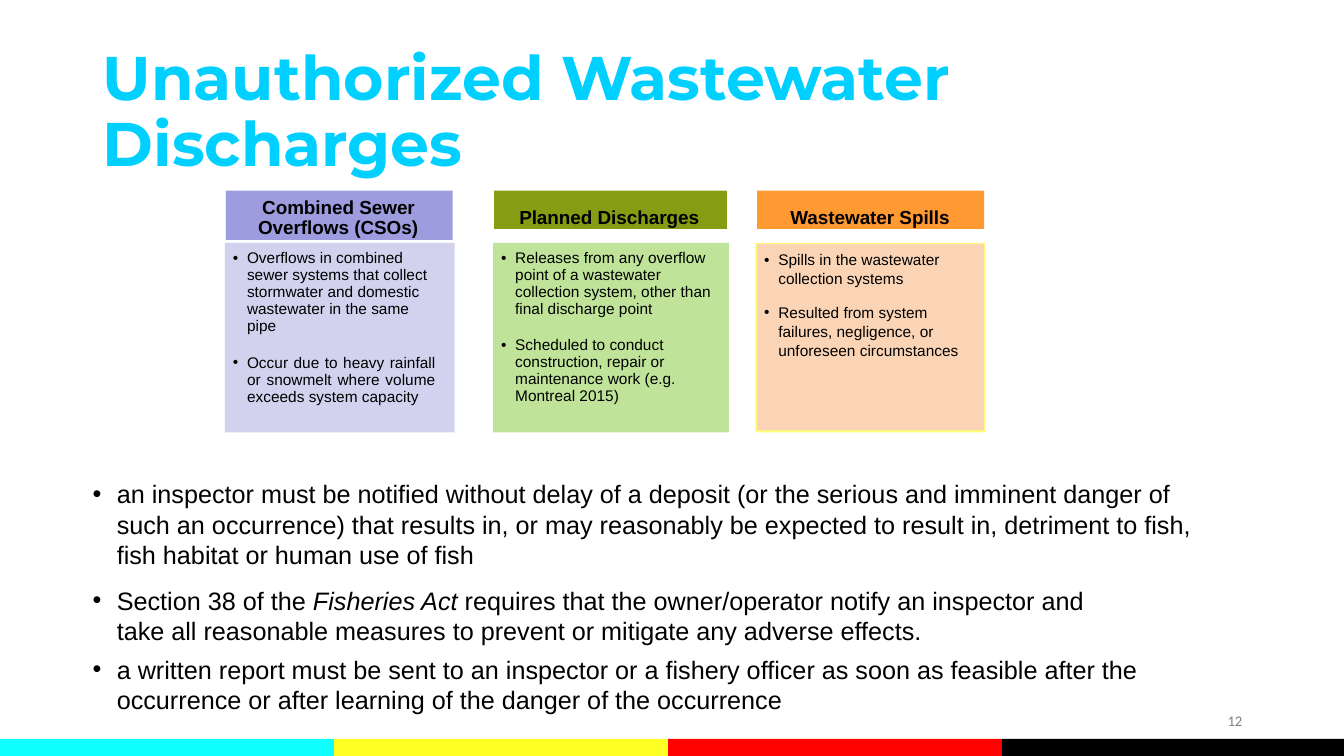
from lxml import etree
from pptx import Presentation
from pptx.dml.color import RGBColor
from pptx.enum.shapes import MSO_SHAPE
from pptx.enum.text import MSO_ANCHOR, PP_ALIGN
from pptx.oxml.ns import qn
from pptx.util import Inches, Pt

RECT = MSO_SHAPE.RECTANGLE
TOP, MIDDLE = MSO_ANCHOR.TOP, MSO_ANCHOR.MIDDLE
LEFT, RIGHT, JUSTIFY = PP_ALIGN.LEFT, PP_ALIGN.RIGHT, PP_ALIGN.JUSTIFY

COLORS = {
    "title": "00D0FF", "text": "000000", "number": "808080",
    "cyan": "0EFFFF", "yellow": "FEFF23", "red": "FF0100", "black": "000000",
    "cso_head": "9C9CDF", "cso_body": "CECEEE",
    "planned_head": "859C13", "planned_body": "B9E08F",
    "spill_head": "FF9932", "spill_edge": "FFFF65", "spill_body": "FBD4B5",
}


class SlideBuilder:
    """Holds the style and the current slide, and adds each kind of element."""

    font = "Arial"

    def __init__(self, slide):
        self.slide = slide

    def style(self, r, size, color="text", bold=False, font=None):
        r.font.name = font or self.font
        r.font.size = Pt(size)
        r.font.bold = bold
        r.font.color.rgb = RGBColor.from_string(COLORS[color])

    def frame(self, sp, insets, anchor=TOP):
        tf = sp.text_frame
        tf.word_wrap = True
        tf.vertical_anchor = anchor
        tf.margin_left, tf.margin_top, tf.margin_right, tf.margin_bottom = map(Inches, insets)
        return tf

    def indent(self, p, left, first, right=0):
        pPr = p._p.get_or_add_pPr()
        for name, value in (("marL", left), ("marR", right), ("indent", first)):
            pPr.set(name, str(Inches(value)))
        return pPr

    def title(self, text, x, y, w, h):
        sp = self.slide.shapes.title
        sp.left, sp.top, sp.width, sp.height = map(Inches, (x, y, w, h))
        tf = self.frame(sp, (0.1, 0.05, 0.1, 0.05), MIDDLE)
        tf.text = text
        p = tf.paragraphs[0]
        p.alignment = LEFT
        p.line_spacing = 0.9
        self.style(p.runs[0], 44, "title", True, "Montserrat")

    def rect(self, x, y, w, h, color, alpha=None):
        sp = self.slide.shapes.add_shape(RECT, *map(Inches, (x, y, w, h)))
        sp.shadow.inherit = False
        sp.fill.solid()
        sp.fill.fore_color.rgb = RGBColor.from_string(COLORS[color])
        sp.line.fill.background()
        if alpha:
            clr = sp._element.spPr.find(qn("a:solidFill"))[0]
            etree.SubElement(clr, qn("a:alpha"), val=str(alpha * 1000))
        return sp

    def heading(self, text, x, w, h, color, inset, left, first=0, spacing=None):
        tf = self.frame(self.rect(x, 1.89, w, h, color), (0, inset, 0, 0))
        tf.text = text
        p = tf.paragraphs[0]
        p.alignment = LEFT
        p.line_spacing = spacing
        self.indent(p, left, first)
        self.style(p.runs[0], 13.5, bold=True)

    def bullets(self, items, box, insets, size, left, hang):
        """Each item is text, space before, right indent, line spacing, alignment."""
        sp = self.slide.shapes.add_textbox(*map(Inches, box))
        tf = self.frame(sp, insets)
        for i, (text, before, right, spacing, align) in enumerate(items):
            p = tf.paragraphs[0] if i == 0 else tf.add_paragraph()
            pPr = self.indent(p, left, -hang, right)
            etree.SubElement(pPr, qn("a:buFont"), typeface=self.font)
            etree.SubElement(pPr, qn("a:buChar"), char="•")
            p.alignment = align
            p.line_spacing = spacing
            p.space_before = Pt(before)
            for j, part in enumerate(text.split("*")):
                r = p.add_run()
                r.text = part
                self.style(r, size)
                r.font.italic = j % 2 == 1

    def card_text(self, items, x, w, h):
        self.bullets(items, (x, 2.42, w, h), (0, 0.06, 0, 0), 11, 0.21, 0.14)

    def number(self, text, x, y, w, h):
        sp = self.slide.shapes.add_textbox(*map(Inches, (x, y, w, h)))
        tf = self.frame(sp, (0.1, 0.05, 0.1, 0.05), MIDDLE)
        tf.text = text
        p = tf.paragraphs[0]
        p.alignment = RIGHT
        self.style(p.runs[0], 10.5, "number", font="Calibri")


def main():
    prs = Presentation()
    prs.slide_width, prs.slide_height = Inches(13.33), Inches(7.5)
    s = SlideBuilder(prs.slides.add_slide(prs.slide_layouts[5]))

    for i, color in enumerate(("cyan", "yellow", "red", "black")):
        s.rect(i * 3.313, 7.33, 3.39 if color == "black" else 3.313, 0.17, color)
    s.title("Unauthorized Wastewater Discharges", 0.92, 0.4, 11.5, 1.45)
    s.number("12", 9.42, 6.95, 3, 0.4)

    s.heading("Planned Discharges", 4.9, 2.31, 0.38, "planned_head", 0.15, 0.25)
    s.rect(4.89, 2.41, 2.34, 1.88, "planned_body", 90)
    s.card_text([
        ("Releases from any overflow point of a wastewater collection system, "
         "other than final discharge point", 0, 0.1, 0.92, LEFT),
        ("Scheduled to conduct construction, repair or maintenance work "
         "(e.g. Montreal 2015)", 13.5, 0.1, 0.92, LEFT),
    ], 4.9, 2.31, 1.62)

    s.heading("Combined Sewer Overflows (CSOs)", 2.24, 2.25, 0.49, "cso_head",
              0.07, 0.32, 0.04, Pt(14.5))
    s.rect(2.23, 2.41, 2.28, 1.88, "cso_body", 90)
    s.card_text([
        ("Overflows in combined sewer systems that collect stormwater and "
         "domestic wastewater in the same pipe", 0, 0.17, 0.92, LEFT),
        ("Occur due to heavy rainfall or snowmelt where volume exceeds "
         "system capacity", 14, 0.17, Pt(12.1), JUSTIFY),
    ], 2.24, 2.25, 1.62)

    s.heading("Wastewater Spills", 7.51, 2.25, 0.38, "spill_head", 0.15, 0.33)
    s.rect(7.49, 2.41, 2.28, 1.88, "spill_edge", 90)
    s.rect(7.51, 2.42, 2.25, 1.85, "spill_body")
    s.card_text([
        ("Spills in the wastewater collection systems", 0, 0.15, 1.03, LEFT),
        ("Resulted from system failures, negligence, or unforeseen "
         "circumstances", 10.8, 0.15, 1.02, LEFT),
    ], 7.51, 2.25, 1.15)

    s.bullets([
        ("an inspector must be notified without delay of a deposit (or the serious "
         "and imminent danger of such an occurrence) that results in, or may "
         "reasonably be expected to result in, detriment to fish, fish habitat or "
         "human use of fish", 0, 0, 1, LEFT),
        ("Section 38 of the *Fisheries Act* requires that the owner/operator notify "
         "an inspector and take all reasonable measures to prevent or mitigate any "
         "adverse effects.", 11.1, 0.95, 1, LEFT),
        ("a written report must be sent to an inspector or a fishery officer as soon "
         "as feasible after the occurrence or after learning of the danger of the "
         "occurrence", 6, 0, 1, LEFT),
    ], (0.81, 4.7, 11.31, 2.46), (0.1, 0.05, 0.1, 0.05), 18, 0.25, 0.24)

    prs.save("out.pptx")


if __name__ == "__main__":
    main()
